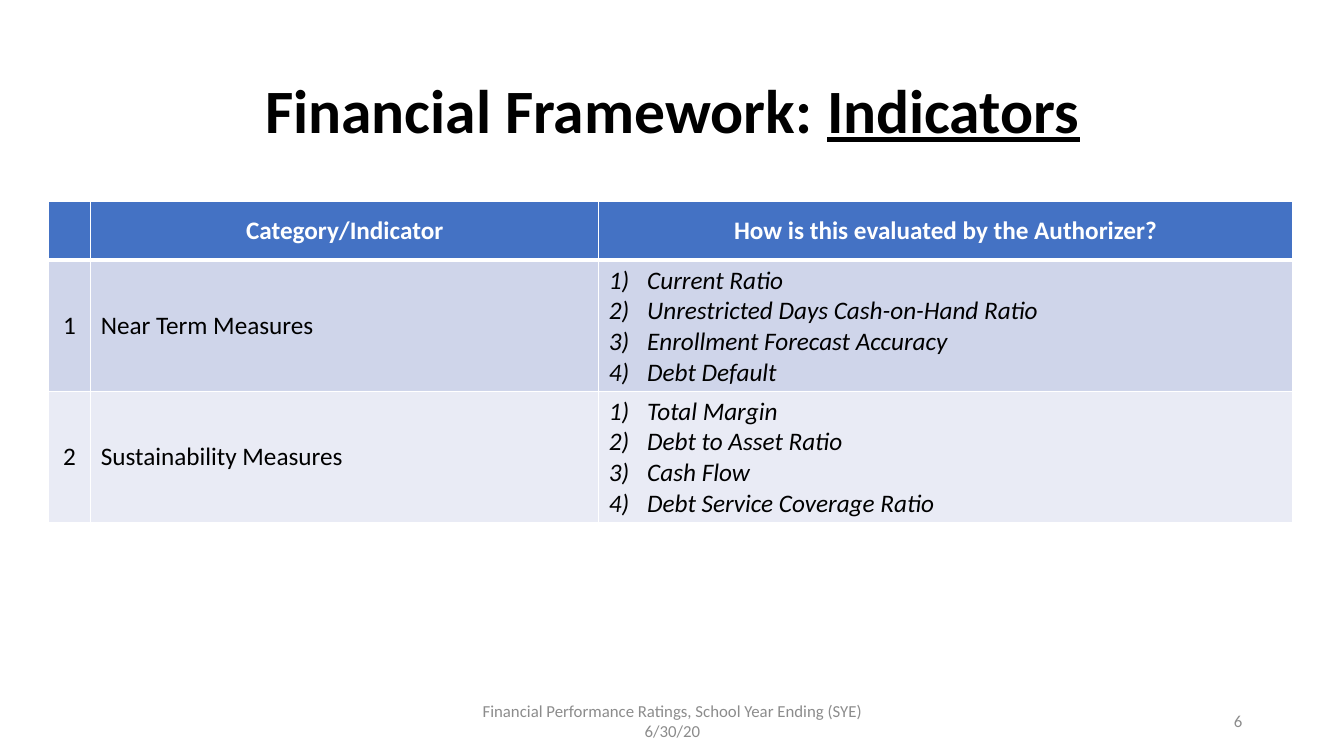
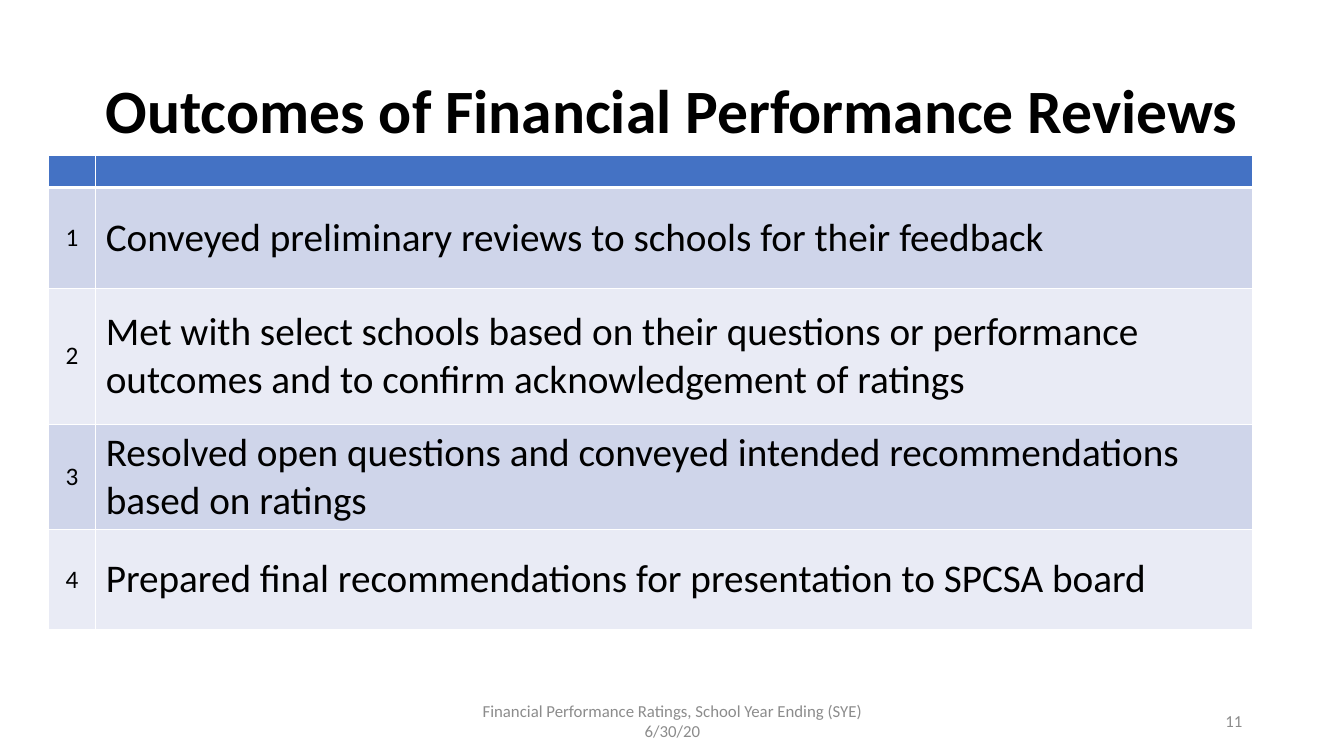
from lxml.etree import SubElement
from pptx import Presentation
from pptx.dml.color import RGBColor
from pptx.enum.text import MSO_ANCHOR, PP_ALIGN
from pptx.oxml import parse_xml
from pptx.oxml.ns import nsdecls, qn
from pptx.util import Inches, Pt

FONT = "Calibri"
BLACK = RGBColor(0x00, 0x00, 0x00)
WHITE = RGBColor(0xFF, 0xFF, 0xFF)
GRAY = RGBColor(0x8C, 0x8C, 0x8C)
HEADER_BLUE = RGBColor(0x44, 0x72, 0xC4)
BANDS = [RGBColor(0xCF, 0xD5, 0xEA), RGBColor(0xE9, 0xEB, 0xF5)]

FOOTER = "Financial Performance Ratings, School Year Ending (SYE) 6/30/20"
TITLE_BOX = (0.92, 0.4, 11.5, 1.45)
FOOTER_BOX = (4.42, 6.95, 4.5, 0.4)
NUMBER_BOX = (9.42, 6.95, 3, 0.4)
TABLE_LEFT = 0.48
LIST_INDENT = Inches(0.38)

SLIDES = [
    {
        "title": "Financial Framework: ",
        "underlined": "Indicators",
        "number": "6",
        "top": 2,
        "columns": [0.42, 5.04, 6.88],
        "rows": [0.58, 1.3, 1.3],
        "body_size": 18,
        "cells": [
            ["", "Category/Indicator", "How is this evaluated by the Authorizer?"],
            ["1", "Near Term Measures", [
                "Current Ratio",
                "Unrestricted Days Cash-on-Hand Ratio",
                "Enrollment Forecast Accuracy",
                "Debt Default",
            ]],
            ["2", "Sustainability Measures", [
                "Total Margin",
                "Debt to Asset Ratio",
                "Cash Flow",
                "Debt Service Coverage Ratio",
            ]],
        ],
    },
    {
        "title": "Outcomes of Financial Performance Reviews",
        "underlined": "",
        "number": "11",
        "top": 1.54,
        "columns": [0.47, 11.47],
        "rows": [0.32, 1, 1.35, 1.04, 1],
        "body_size": 28,
        "cells": [
            ["", ""],
            ["1", "Conveyed preliminary reviews to schools for their feedback"],
            ["2", "Met with select schools based on their questions or performance "
                  "outcomes and to confirm acknowledgement of ratings"],
            ["3", "Resolved open questions and conveyed intended recommendations "
                  "based on ratings"],
            ["4", "Prepared final recommendations for presentation to SPCSA board"],
        ],
    },
]


def style(paragraph, size, color, align=PP_ALIGN.LEFT, bold=False, italic=False):
    paragraph.alignment = align
    font = paragraph.font
    font.name, font.size, font.bold, font.italic = FONT, Pt(size), bold, italic
    font.color.rgb = color


def add_text(slide, box, text, size, color, align, bold=False):
    frame = slide.shapes.add_textbox(*map(Inches, box)).text_frame
    frame.word_wrap = True
    frame.vertical_anchor = MSO_ANCHOR.MIDDLE
    paragraph = frame.paragraphs[0]
    paragraph.add_run().text = text
    style(paragraph, size, color, align, bold)
    return paragraph


def add_title(slide, text, underlined):
    paragraph = add_text(slide, TITLE_BOX, text, 44, BLACK, PP_ALIGN.CENTER, True)
    paragraph.line_spacing = 0.9
    if underlined:
        run = paragraph.add_run()
        run.text = underlined
        run.font.underline = True


def number_paragraph(paragraph):
    properties = paragraph._p.get_or_add_pPr()
    properties.set("marL", str(LIST_INDENT))
    properties.set("indent", str(-LIST_INDENT))
    bullet = SubElement(properties, qn("a:buAutoNum"), type="arabicParenR")
    properties.insert(0, bullet)


def set_borders(cell, row):
    widths = {"L": 1, "R": 1, "T": 3 if row == 1 else 1, "B": 3 if row == 0 else 1}
    properties = cell._tc.get_or_add_tcPr()
    for index, (side, width) in enumerate(widths.items()):
        properties.insert(index, parse_xml(
            f'<a:ln{side} {nsdecls("a")} w="{Pt(width)}"><a:solidFill>'
            f'<a:srgbClr val="{WHITE}"/></a:solidFill></a:ln{side}>'))


def fill_cell(cell, content, row, column, body_size):
    header = row == 0
    cell.fill.solid()
    cell.fill.fore_color.rgb = HEADER_BLUE if header else BANDS[(row - 1) % 2]
    set_borders(cell, row)
    cell.vertical_anchor = MSO_ANCHOR.MIDDLE
    if not content:
        cell.margin_top = cell.margin_bottom = 0
    numbered = isinstance(content, list)
    cell.text = "\n".join(content) if numbered else content
    centered = header or column == 0
    for paragraph in cell.text_frame.paragraphs:
        style(paragraph, 18 if centered else body_size, WHITE if header else BLACK,
              PP_ALIGN.CENTER if centered else PP_ALIGN.LEFT, header, numbered)
        if numbered:
            number_paragraph(paragraph)


def add_grid(slide, top, columns, rows, cells, body_size):
    box = (TABLE_LEFT, top, sum(columns), sum(rows))
    table = slide.shapes.add_table(len(rows), len(columns), *map(Inches, box)).table
    for column, width in zip(table.columns, columns):
        column.width = Inches(width)
    for row, height in zip(table.rows, rows):
        row.height = Inches(height)
    for row, contents in enumerate(cells):
        for column, content in enumerate(contents):
            fill_cell(table.cell(row, column), content, row, column, body_size)


def main():
    presentation = Presentation()
    presentation.slide_width = Inches(13.33)
    presentation.slide_height = Inches(7.5)
    for data in SLIDES:
        slide = presentation.slides.add_slide(presentation.slide_layouts[6])
        add_title(slide, data["title"], data["underlined"])
        add_grid(slide, data["top"], data["columns"], data["rows"],
                 data["cells"], data["body_size"])
        add_text(slide, NUMBER_BOX, data["number"], 12, GRAY, PP_ALIGN.RIGHT)
        add_text(slide, FOOTER_BOX, FOOTER, 12, GRAY, PP_ALIGN.CENTER)
    presentation.save("out.pptx")


if __name__ == "__main__":
    main()
